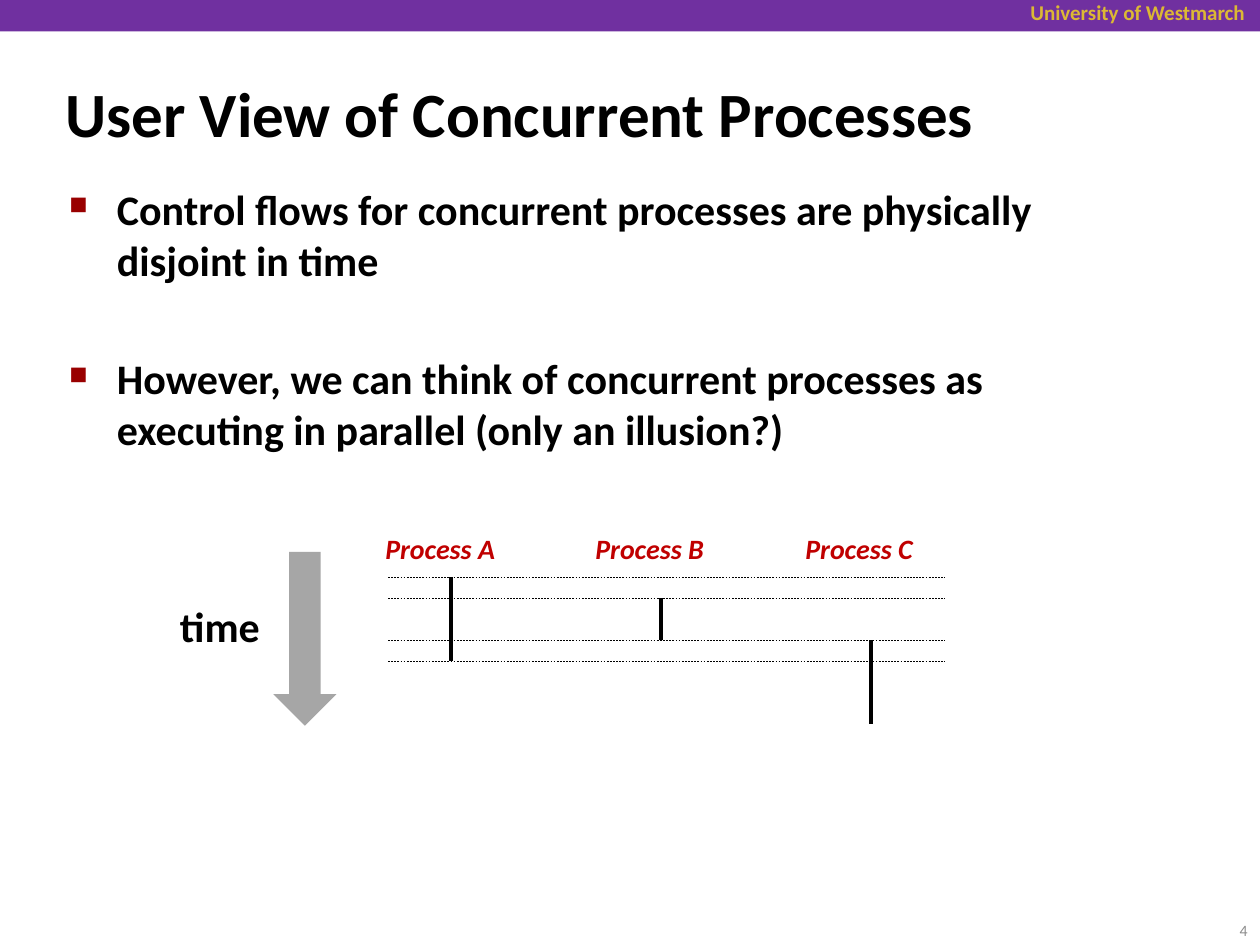
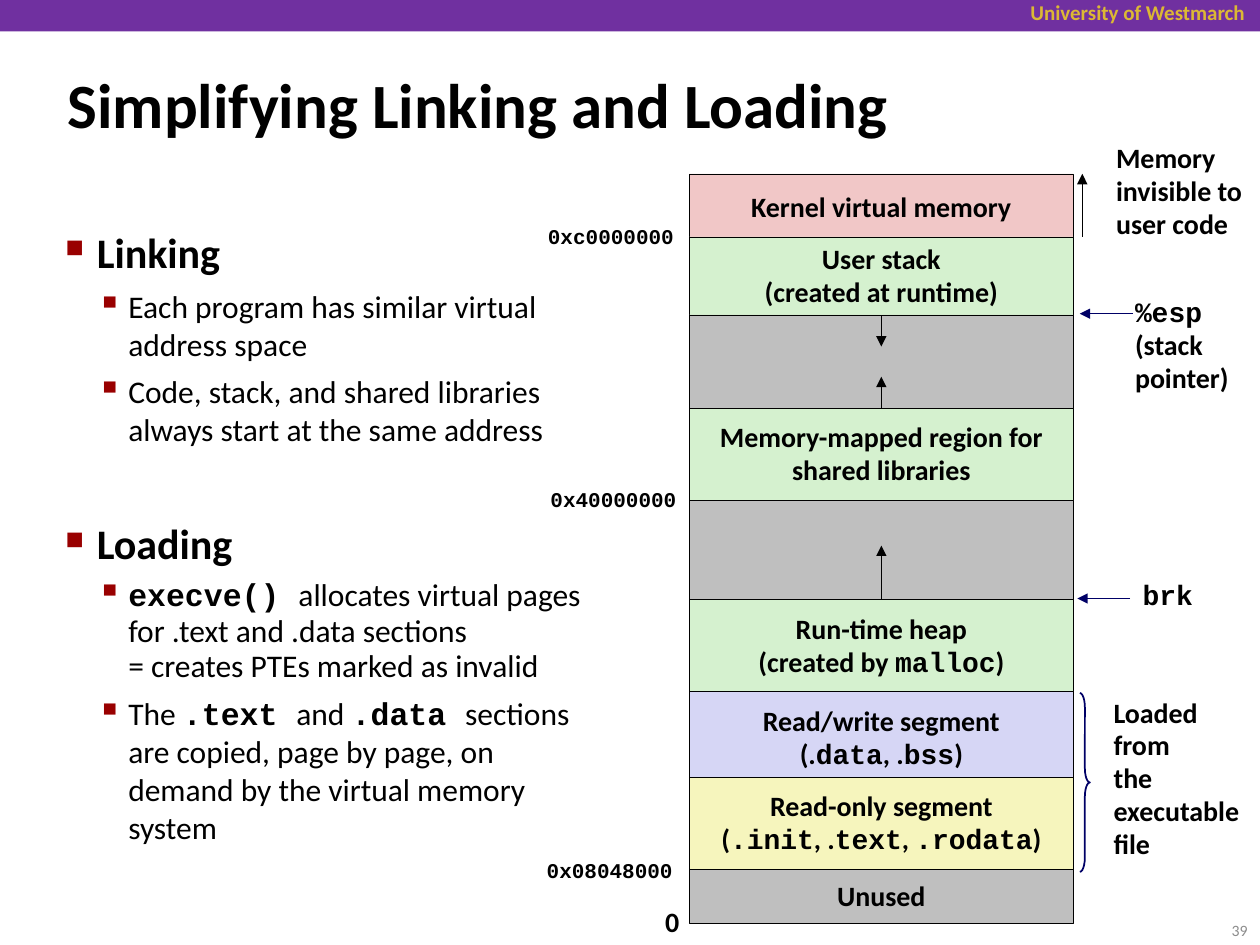
import pptx
import pptx.dml.color
import pptx.enum.dml
import pptx.enum.shapes
import pptx.enum.text
import pptx.oxml
import pptx.oxml.ns
import pptx.util
from lxml import etree

Inches = pptx.util.Inches
Pt = pptx.util.Pt
RGBColor = pptx.dml.color.RGBColor
SHAPE = pptx.enum.shapes.MSO_SHAPE
ALIGN = pptx.enum.text.PP_ALIGN
ANCHOR = pptx.enum.text.MSO_ANCHOR
qn = pptx.oxml.ns.qn

# Shared style
FONT, MONO = "Calibri", "Courier New"
BLACK = RGBColor(0x00, 0x00, 0x00)
PURPLE = RGBColor(0x70, 0x30, 0xA0)
GOLD = RGBColor(0xDC, 0xB8, 0x34)
NUMBER_GRAY = RGBColor(0x8C, 0x8C, 0x8C)
ARROW_GRAY = RGBColor(0xA6, 0xA6, 0xA6)
RED = RGBColor(0xC0, 0x00, 0x00)
BULLET_RED = "990000"
NAVY = RGBColor(0x00, 0x00, 0x66)
PINK = RGBColor(0xF1, 0xC7, 0xC7)
GREEN = RGBColor(0xD5, 0xF1, 0xCF)
GRAY = RGBColor(0xBF, 0xBF, 0xBF)
BLUE = RGBColor(0xD6, 0xD6, 0xF5)
YELLOW = RGBColor(0xF6, 0xF5, 0xBD)

# Bullet levels: text indent, hanging, bullet, bullet size %
BULLETS = {"wide": (0.38, 0.38, "■", 60),
           "head": (0.25, 0.25, "■", 60),
           "sub": (0.5, 0.25, "▪", 110)}


# Text
def add_runs(p, text, size, bold=True, color=BLACK, italic=False):
    """Backticks enclose code, which is set in bold monospace."""
    for i, part in enumerate(text.split("`")):
        code = i % 2 == 1
        for j, line in enumerate(part.split("\n")):
            if j:
                p.add_line_break()
            if line:
                r = p.add_run()
                r.text = line
                r.font.name = MONO if code else FONT
                r.font.size = Pt(size)
                r.font.bold = bold or code
                r.font.italic = italic
                r.font.color.rgb = color


def fill_text(tf, lines, size, align=ALIGN.LEFT, tight=False, **style):
    for i, line in enumerate(lines):
        p = tf.paragraphs[0] if i == 0 else tf.add_paragraph()
        p.alignment = align
        if tight:
            p.line_spacing = 0.94 if line.startswith("`") else 0.98
        add_runs(p, line, size, **style)


def add_text(s, box, lines, size, wrap=True, anchor=ANCHOR.TOP, **style):
    sp = s.shapes.add_textbox(*map(Inches, box))
    tf = sp.text_frame
    tf.word_wrap = wrap
    tf.vertical_anchor = anchor
    if not wrap:
        tf.auto_size = pptx.enum.text.MSO_AUTO_SIZE.SHAPE_TO_FIT_TEXT
    fill_text(tf, lines, size, **style)


def add_bullets(s, box, items):
    """Each item: level, text, size, bold, space before, line spacing."""
    tf = s.shapes.add_textbox(*map(Inches, box)).text_frame
    tf.word_wrap = True
    for i, (level, text, size, bold, before, spacing) in enumerate(items):
        p = tf.paragraphs[0] if i == 0 else tf.add_paragraph()
        p.space_before = Pt(before)
        p.line_spacing = spacing
        p.level = 1 if level == "sub" else 0
        left, hang, char, percent = BULLETS[level]
        pPr = p._p.get_or_add_pPr()
        pPr.set("marL", str(Inches(left)))
        pPr.set("indent", str(-Inches(hang)))
        clr = etree.SubElement(pPr, qn("a:buClr"))
        etree.SubElement(clr, qn("a:srgbClr")).set("val", BULLET_RED)
        etree.SubElement(pPr, qn("a:buSzPct")).set("val", str(percent * 1000))
        etree.SubElement(pPr, qn("a:buChar")).set("char", char)
        add_runs(p, text, size, bold)


# Shapes and lines
def add_shape(s, kind, box, fill=None, line=None, width=0.25):
    sp = s.shapes.add_shape(kind, *map(Inches, box))
    sp.shadow.inherit = False
    if fill is None:
        sp.fill.background()
    else:
        sp.fill.solid()
        sp.fill.fore_color.rgb = fill
    if line is None:
        sp.line.fill.background()
    else:
        sp.line.color.rgb = line
        sp.line.width = Pt(width)
    return sp


def add_line(s, x1, y1, x2, y2, width=0.25, color=BLACK, dash=False, arrow=False):
    c = s.shapes.add_connector(pptx.enum.shapes.MSO_CONNECTOR.STRAIGHT,
                               *map(Inches, (x1, y1, x2, y2)))
    c.line.color.rgb = color
    c.line.width = Pt(width)
    if dash:
        c.line.dash_style = pptx.enum.dml.MSO_LINE.DASH
    if arrow:
        ln = c.line._get_or_add_ln()
        etree.SubElement(ln, qn("a:tailEnd")).set("type", "triangle")
    etree.SubElement(c._element.spPr, qn("a:effectLst"))
    return c


def new_slide(prs, title, title_box, number):
    s = prs.slides.add_slide(prs.slide_layouts[6])
    add_shape(s, SHAPE.RECTANGLE, (0, 0, 10, 0.25), PURPLE)
    add_text(s, (7.33, -0.05, 2.65, 0.3), ["University of Westmarch"], 12,
             align=ALIGN.RIGHT, color=GOLD)
    add_text(s, title_box, [title], 36, anchor=ANCHOR.MIDDLE)
    add_text(s, (9.33, 7.18, 0.67, 0.4), [str(number)], 9, anchor=ANCHOR.MIDDLE,
             align=ALIGN.RIGHT, bold=False, color=NUMBER_GRAY)
    return s


# Slide: concurrent processes
def processes_slide(prs):
    s = new_slide(prs, "User View of Concurrent Processes", (0.42, 0.58, 9.25, 0.63), 4)
    add_bullets(s, (0.45, 1.41, 8.64, 2.18), [
        ("wide", "Control flows for concurrent processes are physically disjoint in time",
         24, True, 0, 1.0),
        ("wide", "However, we can think of concurrent processes as executing in parallel "
         "(only an illusion?)", 24, True, 39, 1.0),
    ])

    # Time axis
    add_text(s, (1.33, 4.72, 0.84, 0.5), ["time"], 24, wrap=False)
    add_shape(s, SHAPE.DOWN_ARROW, (2.17, 4.38, 0.5, 1.38), ARROW_GRAY)

    # Timeline, in ticks of a sixth of an inch; a time slice lasts two ticks
    top, tick, column = 4.58, 1 / 6, 5 / 3
    for switch in (0, 1, 3, 4):
        y = top + switch * tick
        add_line(s, 3.08, y, 7.5, y, dash=True)
    for i, (name, starts) in enumerate([("A", (0, 2)), ("B", (1,)), ("C", (3, 5))]):
        add_text(s, (2.96 + i * column, 4.17, 1.08, 0.37), [f"Process {name}"], 16,
                 wrap=False, color=RED, italic=True)
        x = 3.58 + i * column
        for start in starts:
            y = top + start * tick
            add_line(s, x, y, x, y + 2 * tick, width=2)


# Slide: linking and loading
def linking_slide(prs):
    s = new_slide(prs, "Simplifying Linking and Loading", (0.44, 0.39, 9.06, 0.86), 39)
    add_bullets(s, (0.42, 1.75, 4.33, 5.23), [
        ("head", "Linking", 24, True, 12.5, 1.0),
        ("sub", "Each program has similar virtual address space", 18, False, 5.6, 1.0),
        ("sub", "Code, stack, and shared libraries always start at the same address",
         18, False, 5.6, 1.0),
        ("head", "Loading", 24, True, 40, 1.0),
        ("sub", "`execve() `allocates virtual pages for .text and .data sections\n"
         "= creates PTEs marked as invalid", 18, False, 5.6, 0.94),
        ("sub", "The `.text `and `.data `sections are copied, page by page, on demand "
         "by the virtual memory system", 18, False, 5.6, 1.0),
    ])

    # Memory map, top to bottom
    left, width = 5.47, 3.05
    middle = left + width / 2
    regions = {}
    for name, y, height, fill, lines in [
        ("kernel", 1.38, 0.53, PINK, ["Kernel virtual memory"]),
        ("stack", 1.88, 0.62, GREEN, ["User stack", "(created at runtime)"]),
        ("upper gap", 2.5, 0.74, GRAY, []),
        ("mapped", 3.24, 0.73, GREEN, ["Memory-mapped region for", "shared libraries"]),
        ("lower gap", 3.97, 0.79, GRAY, []),
        ("heap", 4.76, 0.73, GREEN, ["Run-time heap", "(created by `malloc`)"]),
        ("data", 5.49, 0.73, BLUE, ["Read/write segment", "(.`data`, .`bss`)"]),
        ("code", 6.17, 0.73, YELLOW,
         ["Read-only segment", "(`.init`, .`text`, `.rodata`)"]),
        ("unused", 6.9, 0.43, GRAY, ["Unused"]),
    ]:
        sp = add_shape(s, SHAPE.RECTANGLE, (left, y, width, height), fill, BLACK)
        sp.text_frame.word_wrap = False
        sp.text_frame.vertical_anchor = ANCHOR.MIDDLE
        fill_text(sp.text_frame, lines, 16, align=ALIGN.CENTER, tight=True)
        regions[name] = sp

    # Growth arrows
    for name, side, y1, y2 in [("stack", 2, 2.5, 2.75), ("mapped", 0, 3.24, 2.99),
                               ("heap", 0, 4.76, 4.33)]:
        c = add_line(s, middle, y1, middle, y2, arrow=True)
        c.begin_connect(regions[name], side)

    # Addresses
    for x, y, address in [(4.25, 1.74, "0xc0000000"), (4.27, 3.83, "0x40000000"),
                          (4.24, 6.77, "0x08048000")]:
        add_text(s, (x, y, 1.22, 0.29), [f"`{address}`"], 12, wrap=False, tight=True)

    # Labels beside the map
    for box, lines in [
        ((5.18, 7.14, 0.31, 0.37), ["0"]),
        ((8.76, 1.08, 1.26, 0.89), ["Memory", "invisible to", "user code"]),
        ((8.91, 2.31, 0.95, 0.88), ["`%esp`", "(stack", "pointer)"]),
        ((8.97, 4.56, 0.6, 0.36), ["`brk`"]),
        ((8.74, 5.48, 1.26, 1.42), ["Loaded", "from", "the", "executable", "file"]),
    ]:
        add_text(s, box, lines, 16, wrap=False, tight=True)

    # Pointers and brace
    add_line(s, 8.59, 1.88, 8.59, 1.38, arrow=True)
    add_line(s, 8.99, 2.49, 8.57, 2.49, color=NAVY, arrow=True)
    add_line(s, 8.97, 4.75, 8.55, 4.75, color=NAVY, arrow=True)
    brace = add_shape(s, SHAPE.RIGHT_BRACE, (8.57, 5.5, 0.08, 1.42), line=NAVY, width=1)
    brace.adjustments[0] = 1.42


def main():
    prs = pptx.Presentation()
    prs.slide_width = Inches(10)
    prs.slide_height = Inches(7.5)
    processes_slide(prs)
    linking_slide(prs)
    prs.save("out.pptx")


if __name__ == "__main__":
    main()
